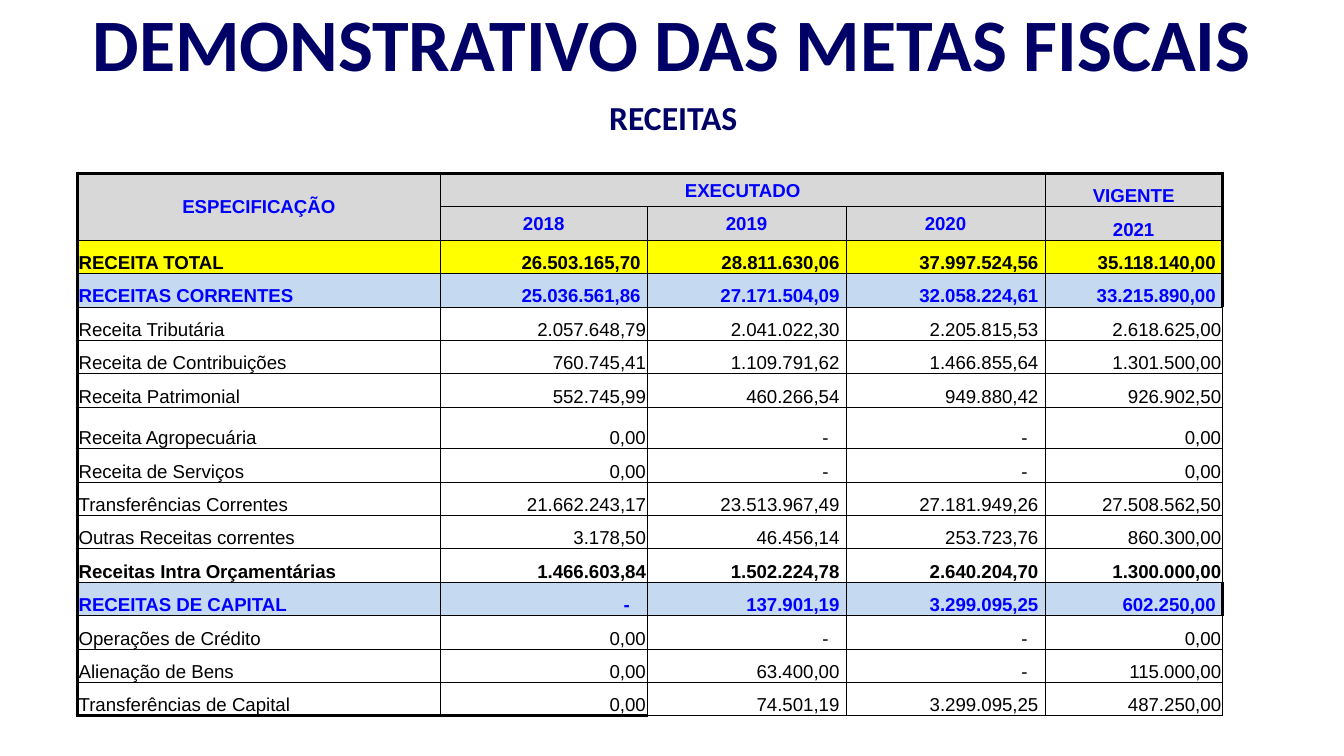
from lxml import etree
from pptx import Presentation
from pptx.dml.color import RGBColor
from pptx.enum.text import MSO_ANCHOR, MSO_AUTO_SIZE, PP_ALIGN
from pptx.oxml.ns import qn
from pptx.util import Inches, Pt

LEFT, CENTER, RIGHT = PP_ALIGN.LEFT, PP_ALIGN.CENTER, PP_ALIGN.RIGHT
TOP, MIDDLE, BOTTOM = MSO_ANCHOR.TOP, MSO_ANCHOR.MIDDLE, MSO_ANCHOR.BOTTOM
NO_FIT = MSO_AUTO_SIZE.NONE

NAVY = RGBColor(0x00, 0x00, 0x66)
BLUE = RGBColor(0x00, 0x00, 0xFF)
BLACK = RGBColor(0x00, 0x00, 0x00)
WHITE = RGBColor(0xFF, 0xFF, 0xFF)
GRAY = RGBColor(0xD8, 0xD8, 0xD8)
YELLOW = RGBColor(0xFF, 0xFF, 0x00)
SKY = RGBColor(0xC5, 0xD9, 0xF1)

GRID_COLS = 100
COL_WIDTHS = [27, 15.4, 14.8, 14.8, 13.2]
THIN, THICK = 0.5, 2

HEADER = [
    ["ESPECIFICAÇÃO", "EXECUTADO", "", "", "VIGENTE"],
    ["", "2018", "2019", "2020", "2021"],
]
REVENUES = [
    ["RECEITA TOTAL", "26.503.165,70", "28.811.630,06", "37.997.524,56", "35.118.140,00"],
    ["RECEITAS CORRENTES", "25.036.561,86", "27.171.504,09", "32.058.224,61", "33.215.890,00"],
    ["Receita Tributária", "2.057.648,79", "2.041.022,30", "2.205.815,53", "2.618.625,00"],
    ["Receita de Contribuições", "760.745,41", "1.109.791,62", "1.466.855,64", "1.301.500,00"],
    ["Receita Patrimonial", "552.745,99", "460.266,54", "949.880,42", "926.902,50"],
    ["Receita Agropecuária", "0,00", "-", "-", "0,00"],
    ["Receita de Serviços", "0,00", "-", "-", "0,00"],
    ["Transferências Correntes", "21.662.243,17", "23.513.967,49", "27.181.949,26", "27.508.562,50"],
    ["Outras Receitas correntes", "3.178,50", "46.456,14", "253.723,76", "860.300,00"],
    ["Receitas Intra Orçamentárias", "1.466.603,84", "1.502.224,78", "2.640.204,70", "1.300.000,00"],
    ["RECEITAS DE CAPITAL", "-", "137.901,19", "3.299.095,25", "602.250,00"],
    ["Operações de Crédito", "0,00", "-", "-", "0,00"],
    ["Alienação de Bens", "0,00", "63.400,00", "-", "115.000,00"],
    ["Transferências de Capital", "0,00", "74.501,19", "3.299.095,25", "487.250,00"],
]
ROWS = HEADER + REVENUES
# Fill and text colour of the highlighted rows
HIGHLIGHTS = {0: (GRAY, BLUE), 1: (GRAY, BLUE), 2: (YELLOW, BLACK),
              3: (SKY, BLUE), 12: (SKY, BLUE)}
BOLD_ROWS = {*HIGHLIGHTS, 11}
TALL_ROW = 7


def write(tf, text, *, font="Arial", size=10, color=BLACK, bold=False,
          align=LEFT, spacing=None):
    """Put one formatted line of text in a text frame."""
    p = tf.paragraphs[0]
    p.alignment = align
    if spacing:
        p.line_spacing = spacing
    r = p.add_run()
    r.text = text
    r.font.name, r.font.size, r.font.bold = font, Pt(size), bold
    r.font.color.rgb = color


def set_borders(cell, widths):
    """Draw black cell borders; widths maps each side to points."""
    tc_pr = cell._tc.get_or_add_tcPr()
    for side, width in widths.items():
        ln = etree.SubElement(tc_pr, qn(f"a:ln{side}"), w=str(Pt(width)))
        fill = etree.SubElement(ln, qn("a:solidFill"))
        etree.SubElement(fill, qn("a:srgbClr"), val=str(BLACK))


class Deck:
    """Current slide on a square grid of 100 columns."""

    def __init__(self, prs):
        self.unit = prs.slide_width / GRID_COLS
        self.slide = prs.slides.add_slide(prs.slide_layouts[0])

    def length(self, n):
        return round(n * self.unit)

    def heading(self, index, text, box, anchor, **style):
        sp = self.slide.placeholders[index]
        sp.left, sp.top, sp.width, sp.height = map(self.length, box)
        tf = sp.text_frame
        tf.word_wrap, tf.auto_size = True, NO_FIT
        tf.vertical_anchor = anchor
        write(tf, text, font="Calibri", color=NAVY, bold=True, align=CENTER, **style)

    def table(self, left, top, height, tall):
        box = map(self.length, (left, top, sum(COL_WIDTHS), height))
        table = self.slide.shapes.add_table(len(ROWS), len(COL_WIDTHS), *box).table
        table.first_row = table.horz_banding = False
        for column, width in zip(table.columns, COL_WIDTHS):
            column.width = self.length(width)
        regular = (height - tall) / (len(ROWS) - 1)
        for i, row in enumerate(table.rows):
            row.height = self.length(tall if i == TALL_ROW else regular)
        table.cell(0, 0).merge(table.cell(1, 0))
        table.cell(0, 1).merge(table.cell(0, 3))
        for i, texts in enumerate(ROWS):
            for j, text in enumerate(texts):
                if not table.cell(i, j).is_spanned:
                    self.cell(table.cell(i, j), i, j, text)

    def cell(self, cell, i, j, text):
        last_col = len(COL_WIDTHS) - 1
        is_header = i < len(HEADER)
        fill, color = HIGHLIGHTS.get(i, (WHITE, BLACK))
        set_borders(cell, {
            "L": THICK if j == 0 else THIN,
            "R": THICK if j == last_col and i in HIGHLIGHTS else THIN,
            "T": THICK if i == 0 else THIN,
            "B": THICK if i == len(ROWS) - 1 and j < 2 else THIN,
        })
        cell.fill.solid()
        cell.fill.fore_color.rgb = fill
        # Numbers stand off the right edge, dashes a little further
        inset = 0.1
        if text == "-":
            inset = 1.3
        elif not is_header and (j in (2, 3) or j and i in HIGHLIGHTS):
            inset = 0.5
        cell.margin_left = cell.margin_top = self.length(0.1)
        cell.margin_right, cell.margin_bottom = self.length(inset), 0
        cell.vertical_anchor = MIDDLE if is_header and j < last_col else BOTTOM
        align = CENTER if is_header else RIGHT if j else LEFT
        write(cell.text_frame, text, color=color, bold=i in BOLD_ROWS, align=align)


def main():
    prs = Presentation()
    # Widescreen, 16:9
    prs.slide_width = Inches(10)
    prs.slide_height = prs.slide_width * 9 // 16
    deck = Deck(prs)
    # Headings
    deck.heading(0, "DEMONSTRATIVO DAS METAS FISCAIS", (3.45, 0.65, 93.1, 4.9),
                 MIDDLE, size=39.6)
    deck.heading(1, "RECEITAS", (27.2, 7.05, 45.8, 3.5), TOP, size=18, spacing=0.9)
    # Revenue table
    deck.table(5.75, 12.9, 40.4, tall=3.1)
    prs.save("out.pptx")


if __name__ == "__main__":
    main()
